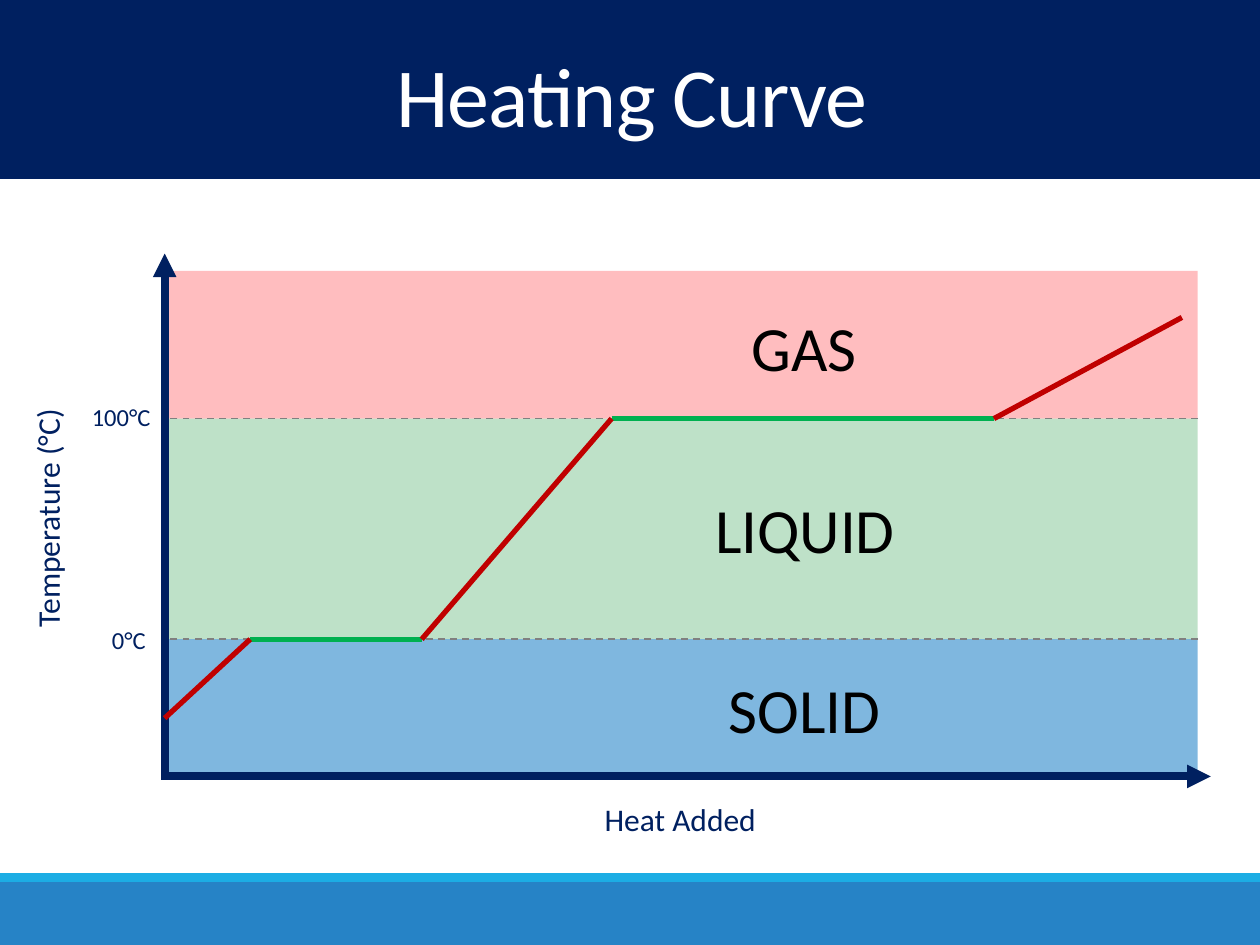
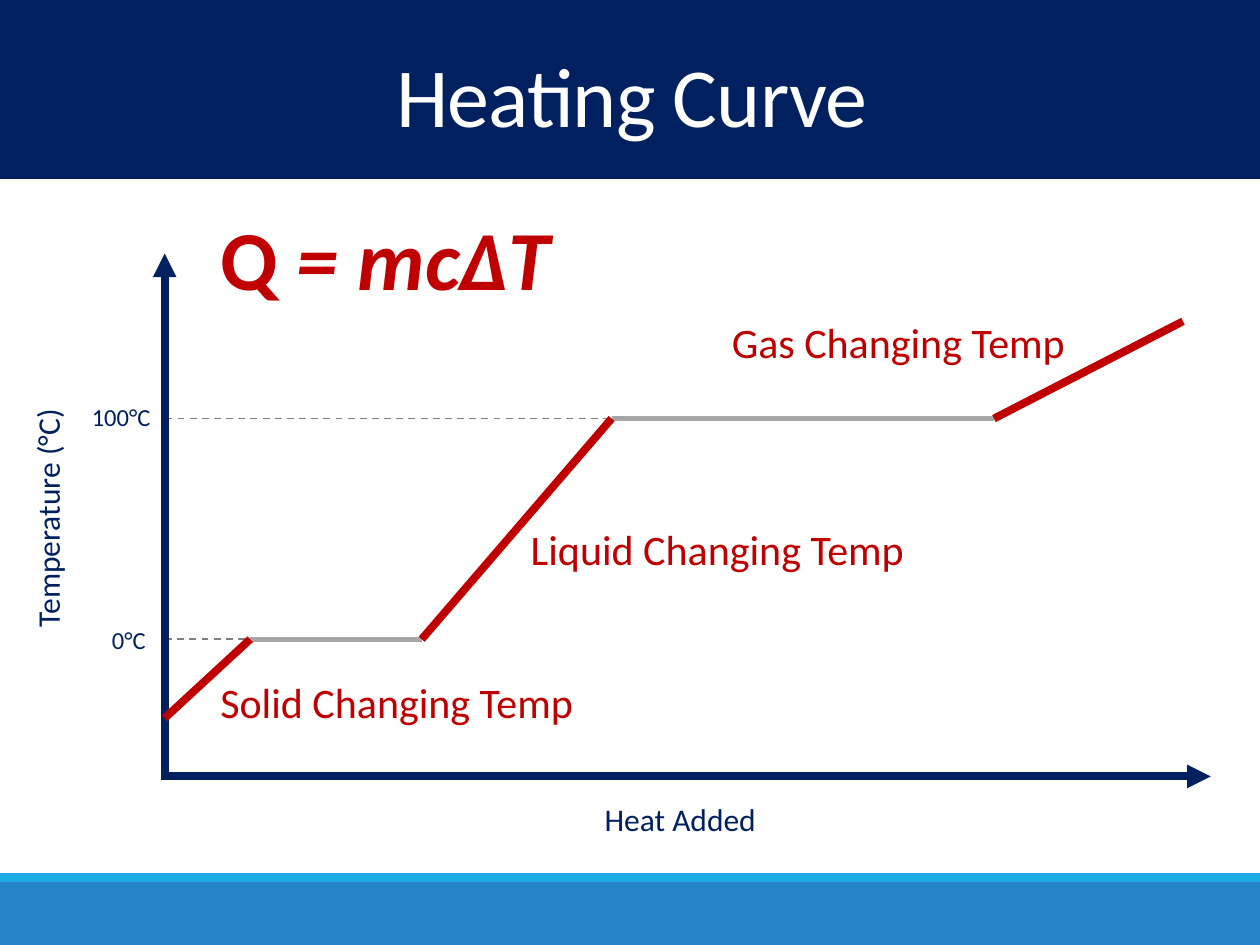
from itertools import pairwise

from lxml import etree
from pptx import Presentation
from pptx import util as u
from pptx.dml.color import RGBColor
from pptx.enum import dml, shapes, text
from pptx.oxml.ns import qn

Pt = u.Pt
FONT = "Calibri"
COLORS = {
    "navy": "002060", "white": "FFFFFF", "black": "000000",
    "footer": "2683C6", "stripe": "1CADE4",
    "gas": "FF7C80", "liquid": "7EC492", "solid": "0070C0",
    "red": "C00000", "green": "00B050", "gray": "A6A6A6", "dash": "808080",
}
RGB = {name: RGBColor.from_string(value) for name, value in COLORS.items()}

# Graph geometry
AXIS_X, AXIS_Y = 94.1, 443.7
FREEZING, BOILING = 365.3, 239.2
BANDS = [  # left, top, width, height, colour
    (0, 504, 720, 36, "footer"),
    (0, 499, 720, 5, "stripe"),
    (0, 0, 720, 102.2, "navy"),
]
PHASES = [  # top, bottom, colour, label left, label top, label width
    (154.8, BOILING, "gas", 422.4, 172.6, 76),
    (BOILING, FREEZING, "liquid", 401.5, 276.9, 118),
    (FREEZING, AXIS_Y, "solid", 409.4, 379.4, 102.5),
]
AXIS_LABELS = [  # text, left, top, width, height, size, rotation
    ("Heat Added", 338.4, 453.6, 102.2, 28.8, 18, 0),
    ("Temperature (°C)", -43.2, 280.8, 140.4, 28.8, 18, 270),
    ("0°C", 56.9, 353.5, 33.8, 24.5, 14, 0),
    ("100°C", 45.4, 226.1, 48.2, 24.5, 14, 0),
]
# Per slide: flat and sloped colours, sloped width, dash ends, curve's last point
STYLES = [
    {"flat": "green", "slope": "red", "weight": 3, "ends": (684.7, 684.7), "last": (675.4, 181.4)},
    {"flat": "gray", "slope": "red", "weight": 4.5, "ends": (348.5, 146.9), "last": (676, 183.6)},
]


def add_line(page, start, end, color, width, dashed=False, arrow=False):
    line = page.shapes.add_connector(
        shapes.MSO_CONNECTOR.STRAIGHT, *(Pt(value) for value in (*start, *end)))
    line.line.color.rgb = RGB[color]
    line.line.width = Pt(width)
    if dashed:
        line.line.dash_style = dml.MSO_LINE.DASH
    properties = line.element.spPr
    if arrow:
        etree.SubElement(properties.find(qn("a:ln")), qn("a:tailEnd"), type="triangle")
    etree.SubElement(properties, qn("a:effectLst"))


def add_text(page, spans, left, top, width, height, size, color, rotation=0):
    box = page.shapes.add_textbox(Pt(left), Pt(top), Pt(width), Pt(height))
    box.rotation = rotation
    box.text_frame.word_wrap = False
    box.text_frame.auto_size = text.MSO_AUTO_SIZE.SHAPE_TO_FIT_TEXT
    para = box.text_frame.paragraphs[0]
    for words, extra in spans:
        span = para.add_run()
        span.text = words
        span.font.color.rgb = RGB[color]
        for name, value in {"name": FONT, "size": Pt(size), **extra}.items():
            setattr(span.font, name, value)


deck = Presentation()
deck.slide_width, deck.slide_height = Pt(720), Pt(540)

for number, style in enumerate(STYLES):
    page = deck.slides.add_slide(deck.slide_layouts[5])

    # Header, footer and, on the first slide, translucent phase areas
    areas = [(*band, 100) for band in BANDS]
    if number == 0:
        areas += [(93.6, top, 590.8, bottom - top, color, 50)
                  for top, bottom, color, *_ in PHASES]
    for left, top, width, height, color, opacity in areas:
        area = page.shapes.add_shape(
            shapes.MSO_SHAPE.RECTANGLE, Pt(left), Pt(top), Pt(width), Pt(height))
        area.shadow.inherit = False
        area.fill.solid()
        area.fill.fore_color.rgb = RGB[color]
        area.line.fill.background()
        if opacity < 100:
            fill = area.element.spPr.find(".//" + qn("a:srgbClr"))
            etree.SubElement(fill, qn("a:alpha"), val=str(opacity * 1000))

    # Title, brought in front of the header band
    title = page.shapes.title
    area.element.addnext(title.element)
    for name, value in {"left": 2.2, "top": 30.2, "width": 717.8, "height": 60.5}.items():
        setattr(title, name, Pt(value))
    frame = title.text_frame
    frame.text = "Heating Curve"
    for name, value in {"auto_size": text.MSO_AUTO_SIZE.NONE, "margin_bottom": Pt(8.4),
                        "vertical_anchor": text.MSO_ANCHOR.MIDDLE}.items():
        setattr(frame, name, value)
    para = frame.paragraphs[0]
    para.alignment = text.PP_ALIGN.CENTER
    para.line_spacing = 0.85
    span = para.runs[0]
    span.font.color.rgb = RGB["white"]
    for name, value in {"name": FONT, "size": Pt(48)}.items():
        setattr(span.font, name, value)
    for properties in title.element.iter(qn("a:rPr")):
        properties.set("spc", "-50")

    # Dashed temperature levels and axes
    for level, end in zip((BOILING, FREEZING), style["ends"]):
        add_line(page, (end, level), (AXIS_X, level), "dash", 1, dashed=True)
    add_line(page, (AXIS_X, 445.7), (AXIS_X, 144.9), "navy", 4.5, arrow=True)
    add_line(page, (AXIS_X, AXIS_Y), (691.9, AXIS_Y), "navy", 4.5, arrow=True)
    for words, *place, size, rotation in AXIS_LABELS:
        add_text(page, [(words, {})], *place, size, "navy", rotation)

    # Heating curve: flat where the phase changes, sloped elsewhere
    curve = [(AXIS_X, 410.4), (143, FREEZING), (241, FREEZING),
             (349.5, BOILING), (568, BOILING), style["last"]]
    segments = list(pairwise(curve))
    for start, end in segments[1::2]:
        add_line(page, start, end, style["flat"], 3)
    for start, end in segments[::2]:
        add_line(page, start, end, style["slope"], style["weight"])

# Phase names on the first slide
for _, _, phase, left, top, width in PHASES:
    add_text(deck.slides[0], [(phase.upper(), {})], left, top, width, 51.1, 36, "black")

# Temperature changes and formula on the second slide
for phase, left, top, width in [
    ("Gas", 411.1, 177.1, 206.6),
    ("Liquid", 296.2, 295.6, 229.7),
    ("Solid", 118.8, 383, 218.2),
]:
    add_text(deck.slides[1], [(f"{phase} Changing Temp", {})], left, top, width, 36, 24, "red")
formula = [("Q ", {"bold": True}), ("= mcΔT", {"bold": True, "italic": True})]
add_text(deck.slides[1], formula, 118.8, 114.2, 204.5, 65.5, 48, "red")

deck.save("out.pptx")
